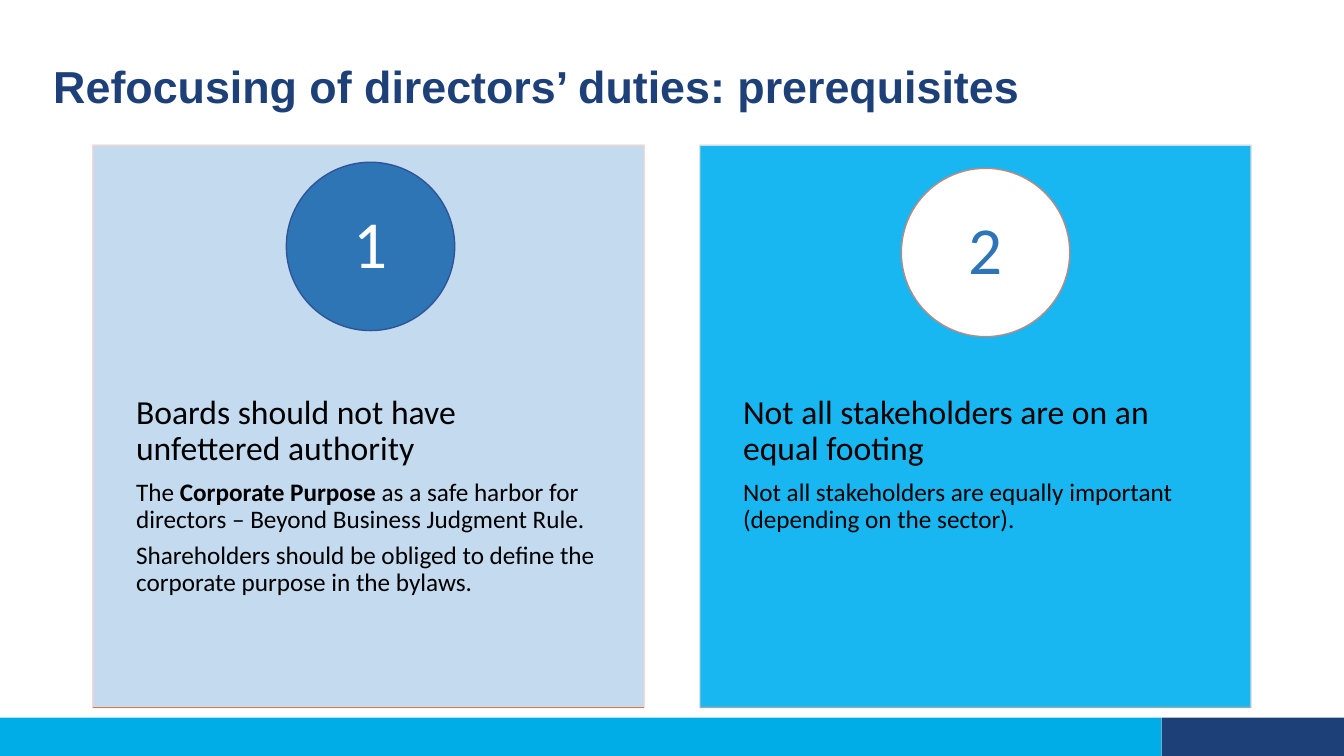
from dataclasses import dataclass

import lxml.etree
import pptx
import pptx.dml.color
import pptx.enum.shapes
import pptx.enum.text
import pptx.oxml.ns
import pptx.util

Inches = pptx.util.Inches
ANCHOR = pptx.enum.text.MSO_ANCHOR
ALIGN = pptx.enum.text.PP_ALIGN
SHAPE = pptx.enum.shapes.MSO_SHAPE


@dataclass(frozen=True)
class Theme:
    navy: str = "1D4078"
    cyan: str = "00ADE7"
    text: str = "000000"
    title_font: str = "Arial"
    body_font: str = "Calibri"
    title_size: int = 32
    number_size: int = 48
    heading_size: int = 24
    detail_size: int = 18
    line_spacing: float = 0.9
    space_after: float = 0.35
    panel_opacity: int = 90


@dataclass(frozen=True)
class Box:
    left: float
    top: float
    width: float
    height: float

    def lengths(self) -> tuple:
        return tuple(Inches(v) for v in (self.left, self.top, self.width, self.height))


@dataclass(frozen=True)
class Span:
    text: str
    bold: bool = False


@dataclass(frozen=True)
class Prerequisite:
    heading: str
    details: list[list[Span]]
    fill: str
    border: str
    base_line: str
    circle_left: float
    circle_top: float
    circle_fill: str
    circle_border: str
    number_color: str


THEME = Theme()
PANEL = Box(0.92, 1.44, 5.47, 5.58)
PANEL_PITCH = 6.02
CIRCLE_SIZE = 1.67

PREREQUISITES = [
    Prerequisite(
        "Boards should not have unfettered authority",
        [
            [Span("The "), Span("Corporate Purpose ", True),
             Span("as a safe harbor for directors – Beyond Business Judgment Rule.")],
            [Span("Shareholders should be obliged to define the corporate purpose in the bylaws.")],
        ],
        "BDD7EE", "F8D7CE", "D17B5C", 2.84, 1.61, "2E75B6", "2F5597", "FFFFFF",
    ),
    Prerequisite(
        "Not all stakeholders are on an equal footing",
        [[Span("Not all stakeholders are equally important (depending on the sector).")]],
        "00B0F0", "E1E1E1", "A5A5A5", 8.94, 1.67, "FFFFFF", "B98A82", "2E75B6",
    ),
]


def rgb(color: str) -> pptx.dml.color.RGBColor:
    return pptx.dml.color.RGBColor.from_string(color)


def add_block(slide, kind, box: Box, fill: str, border: str | None = None, opacity: int = 100):
    """Draw a filled preset shape, with an optional border and opacity."""
    block = slide.shapes.add_shape(kind, *box.lengths())
    block.shadow.inherit = False
    block.fill.solid()
    block.fill.fore_color.rgb = rgb(fill)
    if border:
        block.line.color.rgb = rgb(border)
        block.line.width = pptx.util.Pt(1)
    else:
        block.line.fill.background()
    if opacity < 100:
        for color in block._element.spPr.iter(pptx.oxml.ns.qn("a:srgbClr")):
            alpha = lxml.etree.SubElement(color, pptx.oxml.ns.qn("a:alpha"))
            alpha.set("val", str(opacity * 1000))
    return block


def set_margins(frame, horizontal: float, vertical: float) -> None:
    frame.margin_left = frame.margin_right = Inches(horizontal)
    frame.margin_top = frame.margin_bottom = Inches(vertical)


def add_text_area(slide, box: Box):
    frame = slide.shapes.add_textbox(*box.lengths()).text_frame
    frame.word_wrap = True
    return frame


def write_paragraph(paragraph, spans: list[Span], size: int, color: str, font: str) -> None:
    paragraph.line_spacing = THEME.line_spacing
    for span in spans:
        run = paragraph.add_run()
        run.text = span.text
        run.font.name = font
        run.font.size = pptx.util.Pt(size)
        run.font.bold = span.bold
        run.font.color.rgb = rgb(color)


def add_base_line(slide, panel: Box, color: str) -> None:
    bottom = Inches(panel.top + panel.height)
    line = slide.shapes.add_connector(
        pptx.enum.shapes.MSO_CONNECTOR.STRAIGHT,
        Inches(panel.left), bottom, Inches(panel.left + panel.width), bottom)
    line.line.color.rgb = rgb(color)
    line.line.width = pptx.util.Pt(1)
    lxml.etree.SubElement(line._element.spPr, pptx.oxml.ns.qn("a:effectLst"))


def add_prerequisite(slide, index: int, item: Prerequisite) -> None:
    # Panel
    panel = Box(PANEL.left + index * PANEL_PITCH, PANEL.top, PANEL.width, PANEL.height)
    add_block(slide, SHAPE.RECTANGLE, panel, item.fill, item.border, THEME.panel_opacity)

    # Heading and details
    body = add_text_area(slide, Box(panel.left, 3.56, panel.width, 3.35))
    set_margins(body, 0.43, 0.36)
    rows = [([Span(item.heading)], THEME.heading_size)]
    rows += [(spans, THEME.detail_size) for spans in item.details]
    for row, (spans, size) in enumerate(rows):
        paragraph = body.add_paragraph() if row else body.paragraphs[0]
        paragraph.space_after = pptx.util.Pt(size * THEME.space_after)
        write_paragraph(paragraph, spans, size, THEME.text, THEME.body_font)

    # Numbered circle
    circle_box = Box(item.circle_left, item.circle_top, CIRCLE_SIZE, CIRCLE_SIZE)
    circle = add_block(slide, SHAPE.OVAL, circle_box, item.circle_fill, item.circle_border)
    number = circle.text_frame
    number.vertical_anchor = ANCHOR.MIDDLE
    set_margins(number, 0.13, 0.01)
    number.paragraphs[0].alignment = ALIGN.CENTER
    write_paragraph(number.paragraphs[0], [Span(str(index + 1))],
                    THEME.number_size, item.number_color, THEME.body_font)

    add_base_line(slide, panel, item.base_line)


def main() -> None:
    deck = pptx.Presentation()
    deck.slide_width, deck.slide_height = Inches(13.33), Inches(7.5)
    slide = deck.slides.add_slide(deck.slide_layouts[6])

    # Footer band
    add_block(slide, SHAPE.RECTANGLE, Box(0, 7.12, 11.52, 0.38), THEME.cyan)
    add_block(slide, SHAPE.RECTANGLE, Box(11.52, 7.12, 1.81, 0.38), THEME.navy)

    # Title
    title = add_text_area(slide, Box(0.43, 0.33, 11.73, 1.11))
    title.vertical_anchor = ANCHOR.MIDDLE
    write_paragraph(title.paragraphs[0],
                    [Span("Refocusing of directors’ duties: prerequisites", True)],
                    THEME.title_size, THEME.navy, THEME.title_font)

    # Prerequisite panels
    for index, item in enumerate(PREREQUISITES):
        add_prerequisite(slide, index, item)

    deck.save("out.pptx")


if __name__ == "__main__":
    main()
